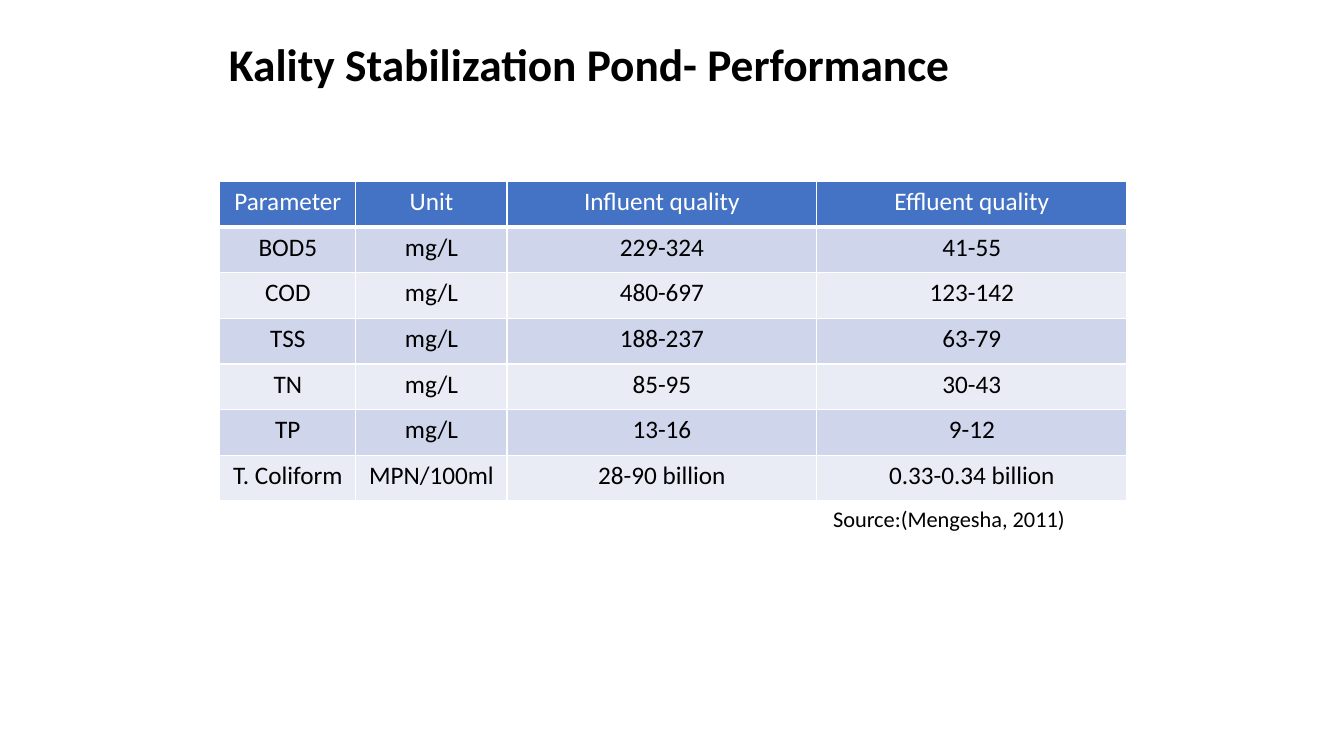
from lxml import etree
from pptx import Presentation
from pptx.dml.color import RGBColor
from pptx.enum.text import MSO_ANCHOR, PP_ALIGN
from pptx.oxml.ns import qn
from pptx.util import Pt

MIDDLE = MSO_ANCHOR.MIDDLE
CENTER = PP_ALIGN.CENTER
FONT = "Calibri"
COLORS = {
    "text": "000000",
    "header": "4472C4",
    "header_text": "FFFFFF",
    "odd_row": "CFD5EA",
    "even_row": "E9EBF5",
    "border": "FFFFFF",
}
COLUMN_WIDTHS = [97.2, 108, 221.2, 221.6]
ROW_HEIGHT = 32.6
QUALITY_ROWS = [
    ["Parameter", "Unit", "Influent quality", "Effluent quality"],
    ["BOD5", "mg/L", "229-324", "41-55"],
    ["COD", "mg/L", "480-697", "123-142"],
    ["TSS", "mg/L", "188-237", "63-79"],
    ["TN", "mg/L", "85-95", "30-43"],
    ["TP", "mg/L", "13-16", "9-12"],
    ["T. Coliform", "MPN/100ml", "28-90 billion", "0.33-0.34 billion"],
]


def style_paragraph(para, size, color, bold=False):
    para.font.name = FONT
    para.font.size = Pt(size)
    para.font.bold = bold
    para.font.color.rgb = RGBColor.from_string(COLORS[color])


def add_text(page, text, left, top, width, height, size, bold=False):
    box = page.shapes.add_textbox(Pt(left), Pt(top), Pt(width), Pt(height))
    frame = box.text_frame
    frame.word_wrap = True
    para = frame.paragraphs[0]
    para.text = text
    style_paragraph(para, size, "text", bold)
    return frame


def add_title(page, left, top, width, height):
    frame = add_text(page, "Kality Stabilization Pond- Performance",
                     left, top, width, height, 32.4, bold=True)
    frame.vertical_anchor = MIDDLE
    frame.paragraphs[0].line_spacing = 0.9


def add_borders(cell, bottom_width):
    properties = cell._tc.get_or_add_tcPr()
    for side, width in (("L", 1), ("R", 1), ("T", 1), ("B", bottom_width)):
        line = etree.SubElement(properties, qn(f"a:ln{side}"), w=str(Pt(width)))
        fill = etree.SubElement(line, qn("a:solidFill"))
        etree.SubElement(fill, qn("a:srgbClr"), val=COLORS["border"])


def add_quality_table(page, left, top, width):
    row_count = len(QUALITY_ROWS)
    table = page.shapes.add_table(
        row_count, len(COLUMN_WIDTHS), Pt(left), Pt(top),
        Pt(width), Pt(row_count * ROW_HEIGHT)).table
    for column, column_width in zip(table.columns, COLUMN_WIDTHS):
        column.width = Pt(column_width)
    for row_index, (row, values) in enumerate(zip(table.rows, QUALITY_ROWS)):
        row.height = Pt(ROW_HEIGHT)
        is_header = row_index == 0
        band = "header" if is_header else "odd_row" if row_index % 2 else "even_row"
        for cell, value in zip(row.cells, values):
            add_borders(cell, 3 if is_header else 1)
            cell.fill.solid()
            cell.fill.fore_color.rgb = RGBColor.from_string(COLORS[band])
            para = cell.text_frame.paragraphs[0]
            para.text = value
            para.alignment = CENTER
            style_paragraph(para, 18, "header_text" if is_header else "text")


def add_source(page, left, top, width, height):
    add_text(page, "Source:(Mengesha, 2011)", left, top, width, height, 16)


def main():
    deck = Presentation()
    deck.slide_width = Pt(960)
    deck.slide_height = Pt(540)
    page = deck.slides.add_slide(deck.slide_layouts[6])
    add_title(page, 156.5, 20, 648, 56)
    add_quality_table(page, 157, 129.6, sum(COLUMN_WIDTHS))
    add_source(page, 588, 357.5, 210, 26.6)
    deck.save("out.pptx")


if __name__ == "__main__":
    main()
